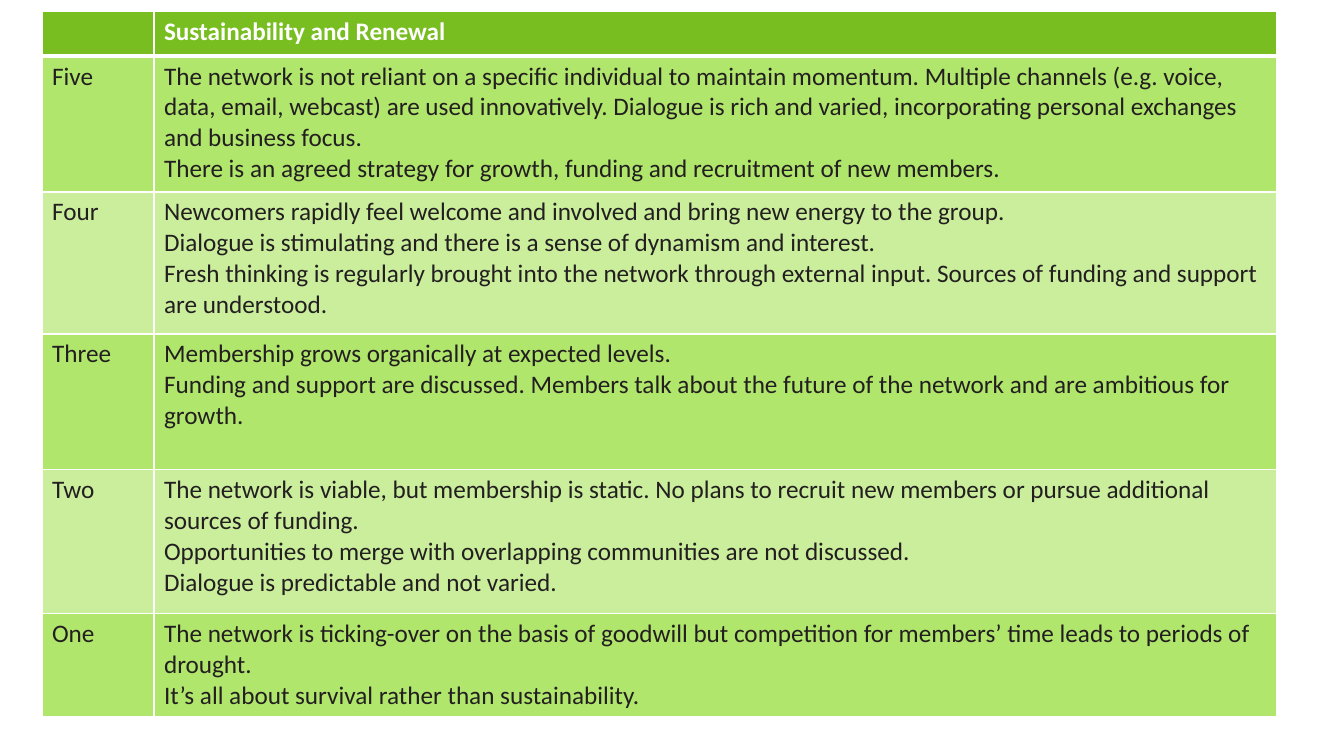
from lxml import etree
from pptx import Presentation
from pptx.dml.color import RGBColor
from pptx.oxml import ns
from pptx.util import Pt

PX = 914400 / 100.8
HEADER_GREEN, DARK_GREEN, PALE_GREEN = "78BE20", "B0E66B", "CAEE9C"
WHITE, INK = "FFFFFF", "231F20"


def paint(color_format, hex_color):
    color_format.rgb = RGBColor.from_string(hex_color)


def add_borders(cell, top, bottom):
    """Put white lines round a cell; top and bottom are widths in points."""
    properties = cell._tc.get_or_add_tcPr()
    widths = {"lnL": 1, "lnR": 1, "lnT": top, "lnB": bottom}
    for position, (side, width) in enumerate(widths.items()):
        line = etree.Element(ns.qn(f"a:{side}"), w=str(Pt(width)))
        fill = etree.SubElement(line, ns.qn("a:solidFill"))
        etree.SubElement(fill, ns.qn("a:srgbClr"), val=WHITE)
        properties.insert(position, line)


levels = [
    ("", ["Sustainability and Renewal"], 45),
    ("Five", [
        "The network is not reliant on a specific individual to maintain momentum. "
        "Multiple channels (e.g. voice, data, email, webcast) are used innovatively. "
        "Dialogue is rich and varied, incorporating personal exchanges and business focus.",
        "There is an agreed strategy for growth, funding and recruitment of new members.",
    ], 136),
    ("Four", [
        "Newcomers rapidly feel welcome and involved and bring new energy to the group.",
        "Dialogue is stimulating and there is a sense of dynamism and interest.",
        "Fresh thinking is regularly brought into the network through external input. "
        "Sources of funding and support are understood.",
    ], 142),
    ("Three", [
        "Membership grows organically at expected levels.",
        "Funding and support are discussed. Members talk about the future of the network "
        "and are ambitious for growth.",
    ], 136),
    ("Two", [
        "The network is viable, but membership is static. No plans to recruit new members "
        "or pursue additional sources of funding.",
        "Opportunities to merge with overlapping communities are not discussed.",
        "Dialogue is predictable and not varied.",
    ], 144),
    ("One", [
        "The network is ticking-over on the basis of goodwill but competition for members’ "
        "time leads to periods of drought.",
        "It’s all about survival rather than sustainability.",
    ], 102),
]
column_widths = [112, 1123]

prs = Presentation()
prs.slide_width = round(1344 * PX)
prs.slide_height = round(756 * PX)
slide = prs.slides.add_slide(prs.slide_layouts[6])

table_height = sum(height for _, _, height in levels)
maturity = slide.shapes.add_table(
    len(levels), len(column_widths), round(42 * PX), round(11 * PX),
    round(sum(column_widths) * PX), round(table_height * PX)).table
for column, width in zip(maturity.columns, column_widths):
    column.width = round(width * PX)

for index, (level, statements, height) in enumerate(levels):
    is_header = index == 0
    row = maturity.rows[index]
    row.height = round(height * PX)
    row_fill = HEADER_GREEN if is_header else DARK_GREEN if index % 2 else PALE_GREEN
    for cell, wording in zip(row.cells, [level, "\n".join(statements)]):
        cell.fill.solid()
        paint(cell.fill.fore_color, row_fill)
        add_borders(cell, top=3 if index == 1 else 1, bottom=3 if is_header else 1)
        cell.text_frame.text = wording
        for paragraph in cell.text_frame.paragraphs:
            for run in paragraph.runs:
                run.font.name = "Calibri"
                run.font.size = Pt(18)
                run.font.bold = is_header
                paint(run.font.color, WHITE if is_header else INK)

prs.save("out.pptx")
